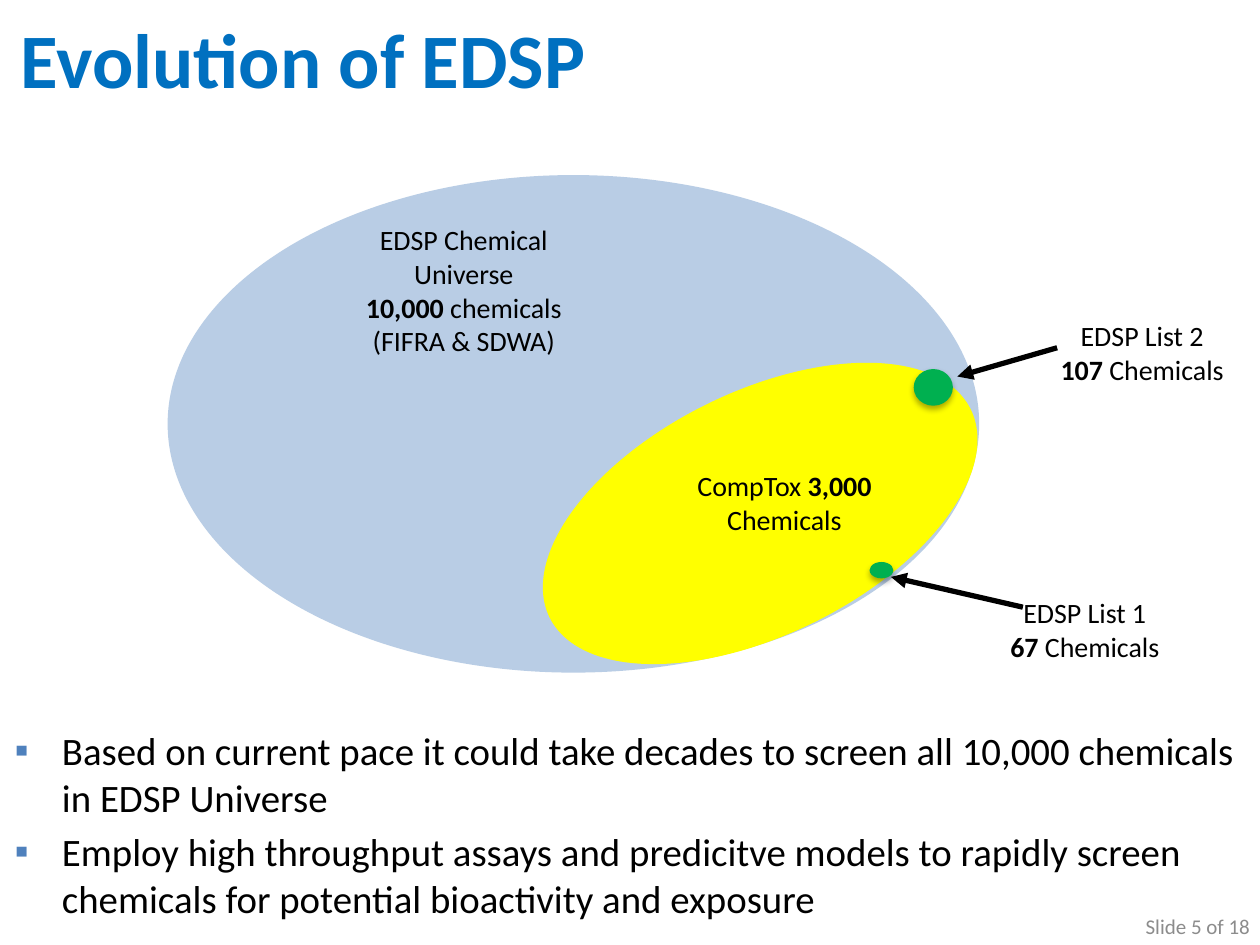
import pptx
import pptx.util
import pptx.dml.color
import pptx.enum.shapes
import pptx.enum.text
import pptx.oxml
import pptx.oxml.ns

Cm, Pt = pptx.util.Cm, pptx.util.Pt
ALIGN = pptx.enum.text.PP_ALIGN
ANCHOR = pptx.enum.text.MSO_ANCHOR
HUES = {"title": "0070C0", "all": "B9CDE5", "tox": "FFFF00", "list": "00B050",
        "text": "000000", "mark": "4F81BD", "page": "8C8C8C"}

# Places are left, top, width, height in cm.
TITLE = ("Evolution of EDSP", (0.05, 0.08, 12.14, 2.16))
OVALS = [  # place, hue, turn, shadow
    ((3.38, 3.53, 16.36, 10.03), "all", 0, False),
    ((10.59, 7.9, 9.47, 4.9), "tox", -26.3, False),
    ((17.53, 11.33, 0.48, 0.33), "list", 0, True),
    ((18.42, 7.44, 0.79, 0.74), "list", 0, True),
]
# Text between asterisks is bold.
LABELS = [
    (["EDSP Chemical Universe", "*10,000* chemicals", "(FIFRA & SDWA)"],
     (6.96, 4.37, 4.78, 3)),
    (["EDSP List 2", "*107* Chemicals"], (20.37, 6.3, 5.31, 1.63)),
    (["EDSP List 1", "*67* Chemicals"], (19.28, 11.89, 5.18, 1.63)),
    (["CompTox *3,000* Chemicals"], (13.16, 9.32, 5.31, 2.31)),
]
ARROWS = [(20.62, 12.24, 17.96, 11.63), (21.31, 7.01, 19.3, 7.59)]
POINTS = (["Based on current pace it could take decades to screen all 10,000 "
           "chemicals in EDSP Universe",
           "Employ high throughput assays and predicitve models to rapidly "
           "screen chemicals for potential bioactivity and exposure"],
          (0.05, 14.53, 25.35, 4.06))
PAGE = ("Slide 5 of 18", (19.53, 18.16, 5.92, 1.02))


def hue(name):
    return pptx.dml.color.RGBColor.from_string(HUES[name])


def node(tag, body="", **attrs):
    text = " ".join(f'{k}="{v}"' for k, v in attrs.items())
    space = pptx.oxml.ns.nsdecls("a")
    return pptx.oxml.parse_xml(f"<a:{tag} {space} {text}>{body}</a:{tag}>")


def write(box, lines, size=16, color="text", bold=False, align=ALIGN.CENTER,
          anchor=ANCHOR.TOP, mark=False):
    frame = box.text_frame
    frame.word_wrap = True
    frame.auto_size = pptx.enum.text.MSO_AUTO_SIZE.NONE
    frame.vertical_anchor = anchor
    for i, line in enumerate(lines):
        para = frame.add_paragraph() if i else frame.paragraphs[0]
        para.alignment = align
        for j, part in enumerate(line.split("*")):
            if part:
                run = para.add_run()
                run.text = part
                run.font.name, run.font.size = "Calibri", Pt(size)
                run.font.bold = bold or j % 2 == 1
                run.font.color.rgb = hue(color)
        if mark:
            para.space_before = Pt(size * 0.2)
            props = para._p.get_or_add_pPr()
            props.set("marL", str(Cm(0.95)))
            props.set("indent", str(-Cm(0.95)))
            props.append(node("buClr", f'<a:srgbClr val="{HUES["mark"]}"/>'))
            props.append(node("buFont", typeface="Wingdings"))
            props[-1].set("typeface", "Calibri")
            props.append(node("buChar", char="▪"))


def label(page, lines, place, **form):
    write(page.shapes.add_textbox(*map(Cm, place)), lines, **form)


def oval(page, place, color, turn, shade):
    shape = page.shapes.add_shape(pptx.enum.shapes.MSO_SHAPE.OVAL,
                                  *map(Cm, place))
    shape.fill.solid()
    shape.fill.fore_color.rgb = hue(color)
    shape.line.fill.background()
    shape.rotation = turn
    shape.shadow.inherit = False
    if shade:
        glow = node("outerShdw",
                    f'<a:srgbClr val="{HUES["text"]}"><a:alpha val="32000"/></a:srgbClr>',
                    blurRad=Pt(3.5), dist=Pt(2.2), dir=90 * 60000, rotWithShape=0)
        shape._element.spPr.find(pptx.oxml.ns.qn("a:effectLst")).append(glow)


def arrow(page, ends):
    link = page.shapes.add_connector(pptx.enum.shapes.MSO_CONNECTOR.STRAIGHT,
                                     *map(Cm, ends))
    link.line.width = Pt(3)
    link.line.color.rgb = hue("text")
    link.line._get_or_add_ln().append(node("tailEnd", type="triangle"))
    link._element.spPr.append(node("effectLst"))


def main():
    deck = pptx.Presentation()
    deck.slide_width, deck.slide_height = Cm(25.4), Cm(19.05)
    page = deck.slides.add_slide(deck.slide_layouts[5])

    title = page.shapes.title
    text, place = TITLE
    title.left, title.top, title.width, title.height = map(Cm, place)
    write(title, [text], size=44, color="title", bold=True, anchor=ANCHOR.MIDDLE)

    for item in OVALS:
        oval(page, *item)
    for lines, place in LABELS:
        label(page, lines, place)
    for ends in ARROWS:
        arrow(page, ends)
    lines, place = POINTS
    label(page, lines, place, size=22.2, align=ALIGN.LEFT, mark=True)
    text, place = PAGE
    label(page, [text], place, size=12, color="page", align=ALIGN.RIGHT,
          anchor=ANCHOR.MIDDLE)
    deck.save("out.pptx")


if __name__ == "__main__":
    main()
